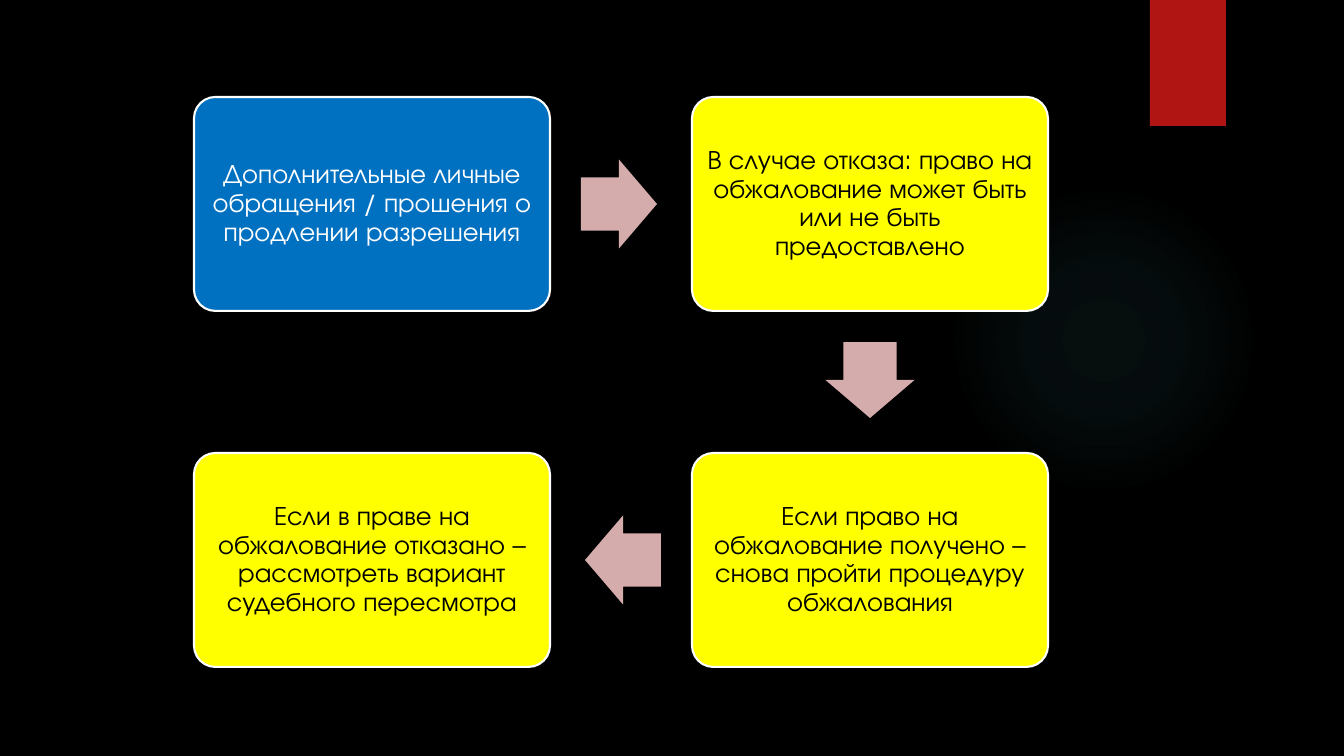
from lxml import etree
from pptx import Presentation, util as u
from pptx.dml.color import RGBColor
from pptx.enum import shapes, text
from pptx.oxml import ns

PX = 914400 / 100.8
BLACK = RGBColor(0x00, 0x00, 0x00)
WHITE = RGBColor(0xFF, 0xFF, 0xFF)
BLUE = RGBColor(0x00, 0x70, 0xC0)
YELLOW = RGBColor(0xFF, 0xFF, 0x00)
RED = RGBColor(0xB0, 0x15, 0x13)
PINK = RGBColor(0xD4, 0xAC, 0xAB)
GLOW = RGBColor(0x50, 0xB9, 0xC1)
FONT = "TeX Gyre Adventor"
KIND = shapes.MSO_SHAPE

# Steps in reading order: column, row, fill, font colour, wording
STEPS = [
    (0, 0, BLUE, WHITE, "Дополнительные личные обращения / прошения о продлении разрешения"),
    (1, 0, YELLOW, BLACK, "В случае отказа: право на обжалование может быть или не быть предоставлено"),
    (1, 1, YELLOW, BLACK, "Если право на обжалование получено – снова пройти процедуру обжалования"),
    (0, 1, YELLOW, BLACK, "Если в праве на обжалование отказано – рассмотреть вариант судебного пересмотра"),
]
BOX_W, BOX_H = 356, 214
ARROW_W, ARROW_H, ARROW_GAP = 76, 89, 31


def px(n):
    return u.Emu(round(n * PX))


def add_plain(s, kind, x, y, w, h, fill):
    sp = s.shapes.add_shape(kind, px(x), px(y), px(w), px(h))
    sp.shadow.inherit = False
    sp.fill.solid()
    sp.fill.fore_color.rgb = fill
    sp.line.fill.background()
    return sp


def add_backdrop(s):
    s.background.fill.solid()
    s.background.fill.fore_color.rgb = BLACK
    # Soft round glow: radial gradient fading to clear
    glow = add_plain(s, KIND.OVAL, 949, 185, 310, 310, GLOW)
    stops = "".join(
        f'<a:gs pos="{pos}000"><a:srgbClr val="{GLOW}"><a:alpha val="{alpha}000"/></a:srgbClr></a:gs>'
        for pos, alpha in [(0, 7), (36, 6), (69, 0), (100, 0)])
    grad = etree.fromstring(
        f'<a:gradFill {ns.nsdecls("a")}><a:gsLst>{stops}</a:gsLst><a:path path="circle">'
        '<a:fillToRect l="50000" t="50000" r="50000" b="50000"/></a:path></a:gradFill>')
    solid = glow._element.spPr.find(ns.qn("a:solidFill"))
    solid.getparent().replace(solid, grad)
    # Red tab at the top edge
    add_plain(s, KIND.RECTANGLE, 1150, 0, 76, 126, RED)


def add_step(s, x, y, fill, color, wording):
    sp = add_plain(s, KIND.ROUNDED_RECTANGLE, x, y, BOX_W, BOX_H, fill)
    sp.adjustments[0] = 0.1
    sp.line.color.rgb = WHITE
    sp.line.width = u.Pt(1.5)
    tf = sp.text_frame
    tf.word_wrap = True
    tf.vertical_anchor = text.MSO_ANCHOR.MIDDLE
    tf.margin_left = tf.margin_right = tf.margin_top = tf.margin_bottom = px(8)
    p = tf.paragraphs[0]
    p.text = wording
    p.alignment = text.PP_ALIGN.CENTER
    p.line_spacing = 0.9
    p.font.name = FONT
    p.font.size = u.Pt(19)
    p.font.color.rgb = color


def add_arrow(s, x, y, dx, dy):
    """Arrow that leaves the step at x, y in the direction dx, dy."""
    reach = ARROW_GAP + ARROW_W / 2
    cx = x + BOX_W / 2 + dx * (BOX_W / 2 + reach)
    cy = y + BOX_H / 2 + dy * (BOX_H / 2 + reach)
    sp = add_plain(s, KIND.RIGHT_ARROW, cx - ARROW_W / 2, cy - ARROW_H / 2,
                   ARROW_W, ARROW_H, PINK)
    sp.adjustments[0] = 0.6
    sp.adjustments[1] = 0.5
    sp.rotation = 90 * dy if dy else 90 * (1 - dx)


def add_flow(s, x, y, w, h):
    def corner(col, row):
        return x + col * (w - BOX_W), y + row * (h - BOX_H)

    for col, row, fill, color, wording in STEPS:
        add_step(s, *corner(col, row), fill, color, wording)
    for (col, row, *_), (next_col, next_row, *_) in zip(STEPS, STEPS[1:]):
        add_arrow(s, *corner(col, row), next_col - col, next_row - row)


def main():
    prs = Presentation()
    prs.slide_width, prs.slide_height = px(1344), px(756)
    s = prs.slides.add_slide(prs.slide_layouts[6])
    add_backdrop(s)
    add_flow(s, 194, 97, 854, 570)
    prs.save("out.pptx")


if __name__ == "__main__":
    main()
